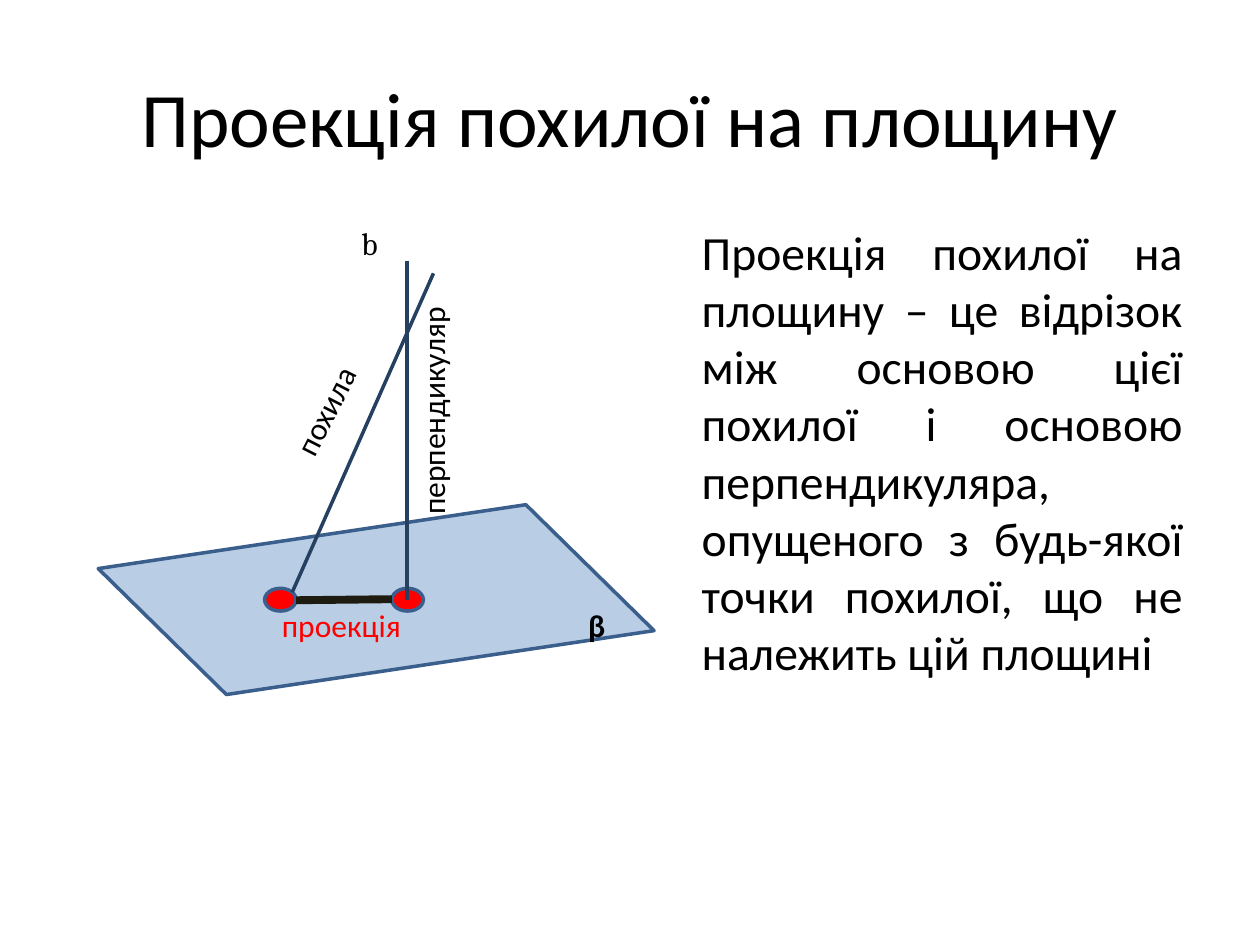
"""Build a geometry slide on the projection of an oblique line onto a plane."""
from lxml.etree import SubElement
from pptx import Presentation
from pptx.dml.color import RGBColor as RGB
from pptx.enum.shapes import MSO_CONNECTOR as Connector, MSO_SHAPE as Shape
from pptx.enum.text import MSO_ANCHOR as Anchor, MSO_AUTO_SIZE as AutoSize, PP_ALIGN as Align
from pptx.oxml.ns import qn
from pptx.util import Pt

THEME = {
    "text": RGB.from_string("000000"),
    "accent": RGB.from_string("FF0000"),
    "plane": RGB.from_string("B9CDE5"),
    "outline": RGB.from_string("3A5F8C"),
    "ray": RGB.from_string("254061"),
    "projection": RGB.from_string("1E1C11"),
    "font": "Calibri",
    "symbol_font": "Cambria",
    "title_size": Pt(44),
    "body_size": Pt(27.2),
    "label_size": Pt(18),
}


def apply(target, formats):
    for attribute, value in formats.items():
        setattr(target, attribute, value)


def write(holder, box, text, frame_format, paragraph_format, font_format, color):
    apply(holder, dict(zip(("left", "top", "width", "height"), map(Pt, box))))
    frame = holder.text_frame
    apply(frame, frame_format)
    paragraph = frame.paragraphs[0]
    apply(paragraph, paragraph_format)
    run = paragraph.add_run()
    run.text = text
    apply(run.font, font_format)
    run.font.color.rgb = color


deck = Presentation()
apply(deck, {"slide_width": Pt(720), "slide_height": Pt(540)})
slide = deck.slides.add_slide(deck.slide_layouts[1])
title, definition = slide.placeholders

write(title, (36, 21.6, 648, 90), "Проекція похилої на площину",
      {"vertical_anchor": Anchor.MIDDLE, "auto_size": AutoSize.NONE},
      {"alignment": Align.CENTER},
      {"name": THEME["font"], "size": THEME["title_size"]}, THEME["text"])
write(definition, (393.8, 123.8, 289.4, 246.2),
      "Проекція похилої на площину – це відрізок між основою цієї похилої "
      "і основою перпендикуляра, опущеного з будь-якої точки похилої, "
      "що не належить цій площині",
      {"vertical_anchor": Anchor.TOP, "auto_size": AutoSize.NONE, "word_wrap": True},
      {"alignment": Align.JUSTIFY},
      {"name": THEME["font"], "size": THEME["body_size"]}, THEME["text"])
definition_layout = definition.text_frame.paragraphs[0]._p.get_or_add_pPr()
for indent in ("marL", "indent"):
    definition_layout.set(indent, "0")
SubElement(definition_layout, qn("a:buNone"))

oblique_foot, perpendicular_foot = (151.2, 336.2, 18, 13), (223.9, 336.2, 18, 13)
figures = [
    (Shape.FLOWCHART_DATA, (60.5, 301.7, 308.9, 82), "plane", 351.5),
    (Shape.OVAL, oblique_foot, "accent", 0),
    (Shape.OVAL, perpendicular_foot, "accent", 0),
]
segments = [
    ((232.6, 149), (232.6, 342.7), "ray", 2),
    ((247.7, 156.2), (167, 338.4), "ray", 2),
    ((169.2, 343), (223.9, 342.4), "projection", 4.5),
]

for kind, box, fill, angle in figures:
    figure = slide.shapes.add_shape(kind, *map(Pt, box))
    apply(figure, {"rotation": angle})
    figure.shadow.inherit = False
    figure.fill.solid()
    figure.fill.fore_color.rgb = THEME[fill]
    figure.line.color.rgb = THEME["outline"]
    figure.line.width = Pt(2)
    if kind == Shape.FLOWCHART_DATA:
        figure._element.spPr.find(qn("a:xfrm")).set("flipV", "1")

for start, end, color, weight in segments:
    segment = slide.shapes.add_connector(Connector.STRAIGHT, *map(Pt, start + end))
    segment.line.color.rgb = THEME[color]
    segment.line.width = Pt(weight)
    SubElement(segment._element.spPr, qn("a:effectLst"))

labels = [
    ("β", (329, 342.7, 46, 48), 0, "font", True, "text"),
    ("b", (199.4, 124.6, 46, 48), 0, "symbol_font", False, "text"),
    ("похила", (151.2, 219.6, 69.8, 28.8), 297, "font", False, "text"),
    ("перпендикуляр", (180, 219.6, 134.6, 28.8), 270, "font", False, "text"),
    ("проекція", (154, 342.7, 83.5, 28.8), 0, "font", False, "accent"),
]
for text, box, angle, font, bold, color in labels:
    label = slide.shapes.add_textbox(*map(Pt, box))
    label.rotation = angle
    write(label, box, text,
          {"word_wrap": False, "auto_size": AutoSize.SHAPE_TO_FIT_TEXT},
          {"alignment": Align.LEFT},
          {"name": THEME[font], "size": THEME["label_size"], "bold": bold}, THEME[color])

deck.save("out.pptx")
